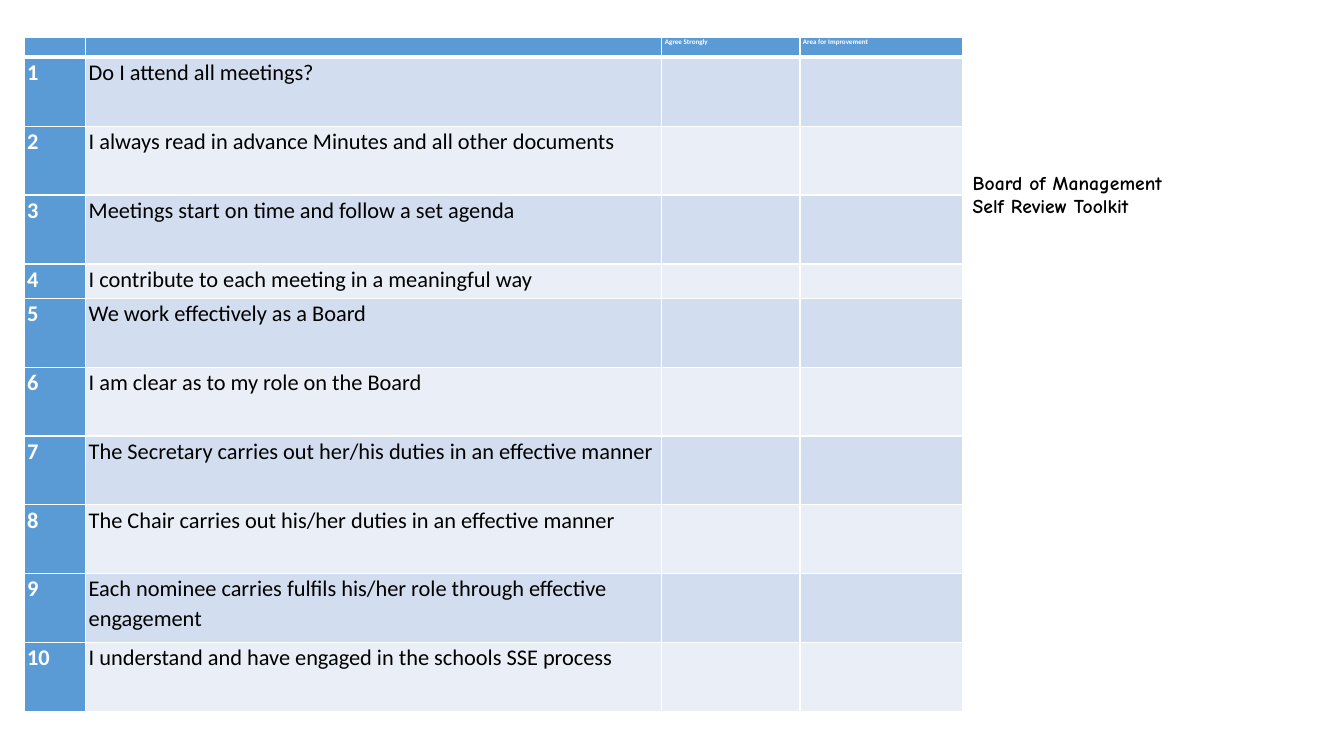
from dataclasses import dataclass

from lxml import etree
from pptx import Presentation
from pptx.dml import color
from pptx.enum import text
from pptx.oxml import ns
from pptx.util import Pt


@dataclass(frozen=True)
class Theme:
    header: str = "5B9BD5"
    bands: tuple = ("D2DEEF", "EAEFF7")
    light: str = "FFFFFF"
    dark: str = "000000"
    body_font: str = "Calibri"
    title_font: str = "Comic Neue"
    header_size: int = 5
    body_size: int = 16
    title_size: int = 14
    spacing: float = 1.07
    rule: int = 1
    header_rule: int = 3


class SlideBuilder:
    """Draw styled elements on one slide."""

    def __init__(self, deck, theme):
        self.theme = theme
        self.page = deck.slides.add_slide(deck.slide_layouts[5])

    def add_run(self, para, words, font, size, ink, bold):
        span = para.add_run()
        span.text = words
        span.font.name = font
        span.font.size = Pt(size)
        span.font.bold = bold
        span.font.color.rgb = color.RGBColor.from_string(ink)

    def title(self, lines, left, top, width, height):
        box = self.page.shapes.title
        box.left, box.top, box.width, box.height = map(Pt, (left, top, width, height))
        frame = box.text_frame
        frame.word_wrap = True
        frame.auto_size = text.MSO_AUTO_SIZE.NONE
        frame.vertical_anchor = text.MSO_ANCHOR.TOP
        frame.margin_left = frame.margin_right = Pt(7.2)
        frame.margin_top = frame.margin_bottom = Pt(4.6)
        para = frame.paragraphs[0]
        para.alignment = text.PP_ALIGN.LEFT
        for index, line in enumerate(lines):
            if index:
                para.add_line_break()
            self.add_run(para, line, self.theme.title_font, self.theme.title_size,
                         self.theme.dark, True)

    def border(self, cell, side, width):
        properties = cell._tc.get_or_add_tcPr()
        line = etree.SubElement(properties, ns.qn(f"a:ln{side}"), w=str(Pt(width)))
        fill = etree.SubElement(line, ns.qn("a:solidFill"))
        etree.SubElement(fill, ns.qn("a:srgbClr"), val=self.theme.light)

    def cell(self, cell, words, row, column):
        theme = self.theme
        is_header = row == 0
        strong = is_header or column == 0
        size = theme.header_size if is_header else theme.body_size
        for side in "LRTB":
            thick = (row, side) in ((0, "B"), (1, "T"))
            self.border(cell, side, theme.header_rule if thick else theme.rule)
        cell.fill.solid()
        shade = theme.header if strong else theme.bands[(row - 1) % 2]
        cell.fill.fore_color.rgb = color.RGBColor.from_string(shade)
        cell.margin_left = cell.margin_right = Pt(2.2)
        cell.margin_top = cell.margin_bottom = 0
        para = cell.text_frame.paragraphs[0]
        para.line_spacing = theme.spacing
        if words:
            self.add_run(para, words, theme.body_font, size,
                         theme.light if strong else theme.dark, strong)
        else:
            etree.SubElement(para._p, ns.qn("a:endParaRPr"), sz=str(size * 100))

    def table(self, rows, left, top, widths, heights):
        frame = self.page.shapes.add_table(
            len(rows), len(widths), Pt(left), Pt(top), Pt(sum(widths)), Pt(sum(heights)))
        table = frame.table
        table.first_col = True
        for column, width in zip(table.columns, widths):
            column.width = Pt(width)
        for line, height in zip(table.rows, heights):
            line.height = Pt(height)
        for row, values in enumerate(rows):
            for column, words in enumerate(values):
                self.cell(table.cell(row, column), words, row, column)


QUESTIONS = [
    "Do I attend all meetings?",
    "I always read in advance Minutes and all other documents",
    "Meetings start on time and follow a set agenda",
    "I contribute to each meeting in a meaningful way",
    "We work effectively as a Board",
    "I am clear as to my role on the Board",
    "The Secretary carries out her/his duties in an effective manner",
    "The Chair carries out his/her duties in an effective manner",
    "Each nominee carries fulfils his/her role through effective engagement",
    "I understand and have engaged in the schools SSE process",
]


def main():
    deck = Presentation()
    deck.slide_width, deck.slide_height = Pt(960), Pt(540)
    slide = SlideBuilder(deck, Theme())
    rows = [("", "", "Agree Strongly", "Area for Improvement")]
    rows += [(str(number), question, "", "")
             for number, question in enumerate(QUESTIONS, 1)]
    tall, short = 49.2, 24.6
    heights = [14.2] + [tall] * 3 + [short] + [tall] * 6
    slide.table(rows, 17.2, 26.8, [44, 411.6, 98.6, 116.2], heights)
    slide.title(["Board of Management", "Self Review Toolkit"], 687.6, 117.4, 245.5, 63.4)
    deck.save("out.pptx")


if __name__ == "__main__":
    main()
